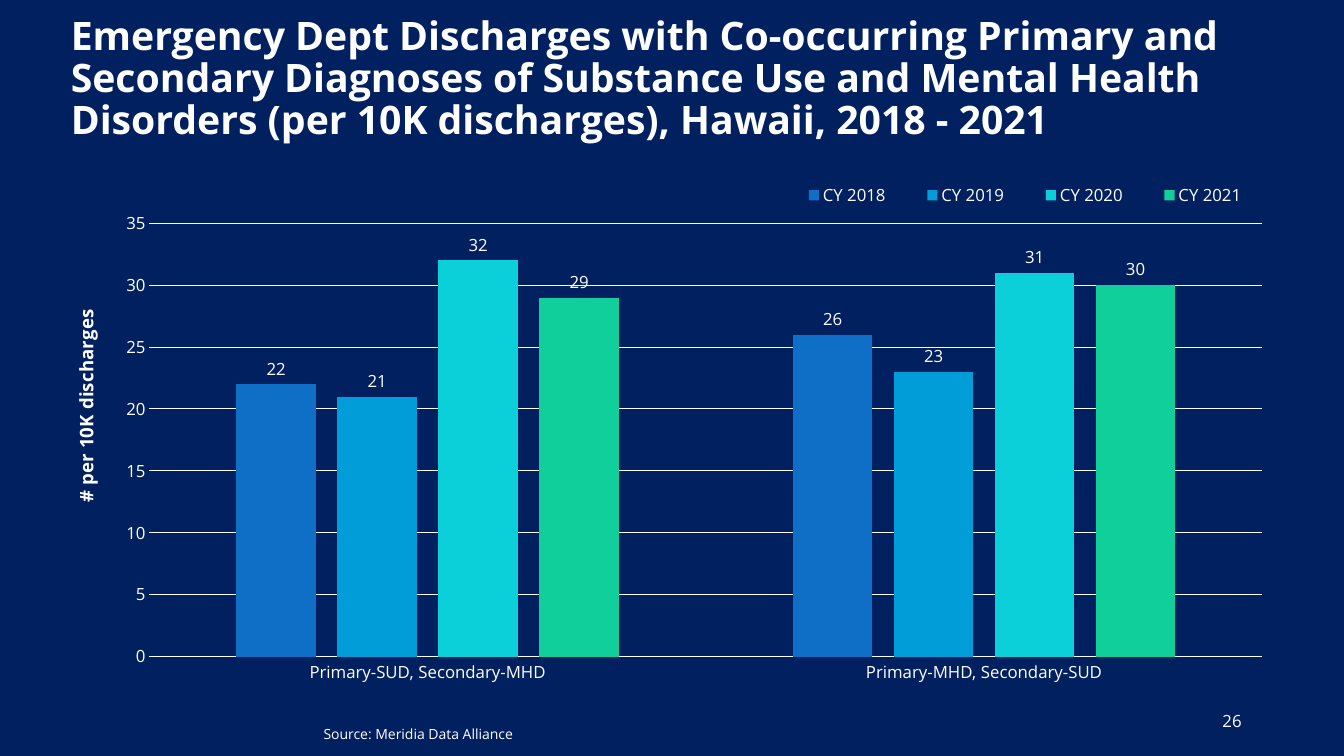
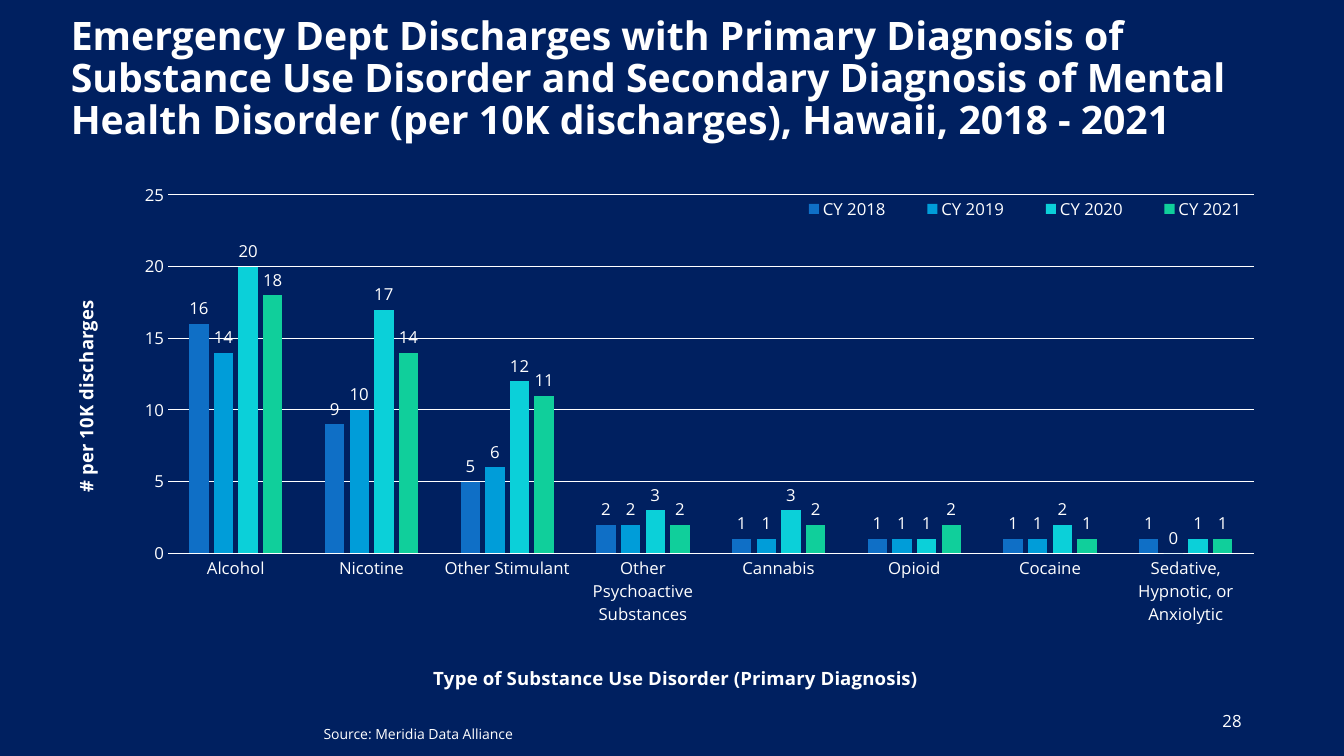
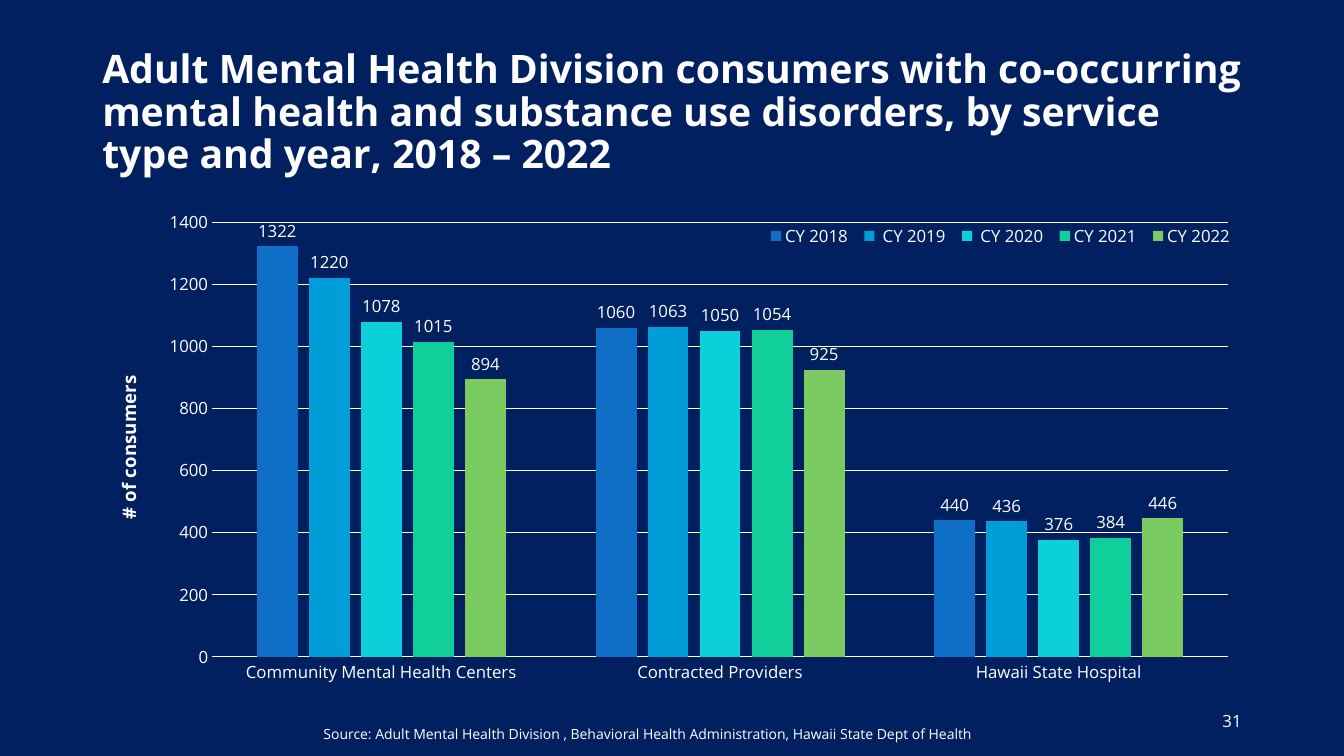
from collections import namedtuple
from dataclasses import dataclass

from lxml import etree
from pptx import Presentation
from pptx.chart.data import CategoryChartData
from pptx.dml.color import RGBColor
from pptx.enum.chart import XL_CHART_TYPE, XL_LABEL_POSITION, XL_LEGEND_POSITION, XL_TICK_MARK
from pptx.enum.text import MSO_ANCHOR, PP_ALIGN
from pptx.oxml.ns import qn
from pptx.util import Pt

COLUMNS = XL_CHART_TYPE.COLUMN_CLUSTERED
OUTSIDE_END = XL_LABEL_POSITION.OUTSIDE_END
LEGEND_TOP = XL_LEGEND_POSITION.TOP
NO_TICK = XL_TICK_MARK.NONE
TOP, MIDDLE = MSO_ANCHOR.TOP, MSO_ANCHOR.MIDDLE
LEFT, RIGHT = PP_ALIGN.LEFT, PP_ALIGN.RIGHT

Box = namedtuple("Box", "left top width height")
Point = namedtuple("Point", "left top")


@dataclass(frozen=True)
class Theme:
    font: str = "Open Sans"
    background: RGBColor = RGBColor(0x00, 0x20, 0x60)
    ink: RGBColor = RGBColor(0xFF, 0xFF, 0xFF)
    years: tuple = ("0F6FC6", "009DD9", "0BD0D9", "10CF9B", "7CCA62")
    title_size: int = 28
    axis_title_size: float = 13.3
    label_size: int = 12
    source_size: int = 10
    line_width: float = 0.75


@dataclass(frozen=True)
class ChartSpec:
    box: Box
    plot: Box
    legend: Box
    value_title: str
    value_title_at: Point
    value_max: int
    value_step: int
    categories: tuple
    series: dict
    category_title: str = ""
    category_title_at: Point = Point(0, 0)


THEME = Theme()
SLIDE_SIZE = (960, 540)
NUMBER_BOX = Box(678, 500.5, 216, 28.75)
WIDE_TITLE = Box(43.5, 5, 873, 104)
INSET_TITLE = Box(66, 28.75, 828, 104.4)
ALLIANCE = "Source: Meridia Data Alliance"

CO_OCCURRING = ChartSpec(
    box=Box(47, 127.5, 865.5, 373),
    plot=Box(106.75, 159.5, 795, 309.5),
    legend=Box(552, 129.5, 361, 20),
    value_title="# per 10K discharges",
    value_title_at=Point(48.5, 218.5),
    value_max=35,
    value_step=5,
    categories=("Primary-SUD, Secondary-MHD", "Primary-MHD, Secondary-SUD"),
    series={
        "CY 2018": (22, 26),
        "CY 2019": (21, 23),
        "CY 2020": (32, 31),
        "CY 2021": (29, 30),
    },
)

BY_SUBSTANCE = ChartSpec(
    box=Box(47, 124, 865.5, 373),
    plot=Box(120, 139.5, 775.5, 259),
    legend=Box(552, 139.5, 361, 20),
    value_title="# per 10K discharges",
    value_title_at=Point(48.5, 214.5),
    value_max=25,
    value_step=5,
    categories=(
        "Alcohol", "Nicotine", "Other Stimulant", "Other Psychoactive Substances",
        "Cannabis", "Opioid", "Cocaine", "Sedative, Hypnotic, or Anxiolytic",
    ),
    series={
        "CY 2018": (16, 9, 5, 2, 1, 1, 1, 1),
        "CY 2019": (14, 10, 6, 2, 1, 1, 1, 0),
        "CY 2020": (20, 17, 12, 3, 3, 1, 2, 1),
        "CY 2021": (18, 14, 11, 2, 2, 2, 1, 1),
    },
    category_title="Type of Substance Use Disorder (Primary Diagnosis)",
    category_title_at=Point(307, 475.5),
)

BY_SERVICE = ChartSpec(
    box=Box(66, 144, 828, 352),
    plot=Box(151.5, 158.75, 725.75, 310.5),
    legend=Box(543, 158.5, 343.5, 20),
    value_title="# of consumers",
    value_title_at=Point(79, 265.5),
    value_max=1400,
    value_step=200,
    categories=("Community Mental Health Centers", "Contracted Providers", "Hawaii State Hospital"),
    series={
        "CY 2018": (1322, 1060, 440),
        " CY 2019": (1220, 1063, 436),
        " CY 2020": (1078, 1050, 376),
        "CY 2021": (1015, 1054, 384),
        "CY 2022": (894, 925, 446),
    },
)


def style_font(font, size, bold=False):
    font.name = THEME.font
    font.size = Pt(size)
    font.bold = bold
    font.color.rgb = THEME.ink


def style_line(line):
    line.color.rgb = THEME.ink
    line.width = Pt(THEME.line_width)


def add_text(slide, box, text, size, bold=False, align=LEFT, anchor=TOP, spacing=1.0):
    frame = slide.shapes.add_textbox(*map(Pt, box)).text_frame
    frame.word_wrap = True
    frame.vertical_anchor = anchor
    paragraph = frame.paragraphs[0]
    paragraph.text = text
    paragraph.alignment = align
    paragraph.line_spacing = spacing
    style_font(paragraph.font, size, bold)


def set_layout(parent, index, chart_box, place, inner=False):
    layout = parent.find(qn("c:layout"))
    if layout is None:
        layout = etree.Element(qn("c:layout"))
        parent.insert(index, layout)
    manual = etree.SubElement(layout, qn("c:manualLayout"))
    settings = [("layoutTarget", "inner")] if inner else []
    settings += [("xMode", "edge"), ("yMode", "edge")]
    settings += [
        ("x", (place.left - chart_box.left) / chart_box.width),
        ("y", (place.top - chart_box.top) / chart_box.height),
    ]
    if isinstance(place, Box):
        settings += [("w", place.width / chart_box.width), ("h", place.height / chart_box.height)]
    for tag, value in settings:
        etree.SubElement(manual, qn("c:" + tag)).set("val", str(value))


def add_axis_title(axis, text, chart_box, place, rotation=0):
    title = axis.axis_title
    title.text_frame.text = text
    style_font(title.text_frame.paragraphs[0].font, THEME.axis_title_size, True)
    body = title.text_frame._txBody.find(qn("a:bodyPr"))
    body.set("rot", str(rotation * 60000))
    body.set("vert", "horz")
    set_layout(title._element, 1, chart_box, place)


def style_axes(chart, spec):
    for axis in (chart.category_axis, chart.value_axis):
        axis.major_tick_mark = axis.minor_tick_mark = NO_TICK
        style_font(axis.tick_labels.font, THEME.label_size)
    style_line(chart.category_axis.format.line)
    values = chart.value_axis
    values.minimum_scale = 0
    values.maximum_scale = spec.value_max
    values.major_unit = spec.value_step
    values.format.line.fill.background()
    style_line(values.major_gridlines.format.line)
    add_axis_title(values, spec.value_title, spec.box, spec.value_title_at, -90)
    if spec.category_title:
        add_axis_title(chart.category_axis, spec.category_title, spec.box, spec.category_title_at)


def style_columns(plot):
    plot.gap_width = 219
    plot.overlap = -27
    plot.vary_by_categories = False
    for year, color in zip(plot.series, THEME.years):
        year.format.fill.solid()
        year.format.fill.fore_color.rgb = RGBColor.from_string(color)
        labels = year.data_labels
        labels.show_value = True
        labels.position = OUTSIDE_END
        labels.number_format = "0"
        labels.number_format_is_linked = False
        style_font(labels.font, THEME.label_size)


def add_column_chart(slide, spec):
    data = CategoryChartData(number_format="0")
    data.categories = spec.categories
    for year, values in spec.series.items():
        data.add_series(year, values)
    chart = slide.shapes.add_chart(COLUMNS, *map(Pt, spec.box), data).chart
    chart.has_title = False
    style_font(chart.font, THEME.source_size)
    style_columns(chart.plots[0])
    style_axes(chart, spec)
    chart.has_legend = True
    chart.legend.position = LEGEND_TOP
    chart.legend.include_in_layout = True
    style_font(chart.legend.font, THEME.label_size)
    set_layout(chart.legend._element, 1, spec.box, spec.legend)
    plot_area = chart._chartSpace.find(".//" + qn("c:plotArea"))
    set_layout(plot_area, 0, spec.box, spec.plot, inner=True)


def add_chart_slide(deck, title, title_box, spec, number, source, source_width):
    slide = deck.slides.add_slide(deck.slide_layouts[6])
    add_text(slide, title_box, title, THEME.title_size, bold=True, anchor=MIDDLE, spacing=0.9)
    add_column_chart(slide, spec)
    add_text(slide, NUMBER_BOX, number, THEME.label_size, align=RIGHT, anchor=MIDDLE)
    add_text(slide, Box(224, 514.75, source_width, 19.5), source, THEME.source_size)


def main():
    deck = Presentation()
    deck.slide_width, deck.slide_height = map(Pt, SLIDE_SIZE)
    backdrop = deck.slide_master.background.fill
    backdrop.solid()
    backdrop.fore_color.rgb = THEME.background

    add_chart_slide(
        deck,
        "Emergency Dept Discharges with Co-occurring Primary and Secondary Diagnoses of "
        "Substance Use and Mental Health Disorders (per 10K discharges), Hawaii, 2018 - 2021",
        WIDE_TITLE, CO_OCCURRING, "26", ALLIANCE, 328.5,
    )
    add_chart_slide(
        deck,
        "Emergency Dept Discharges with Primary Diagnosis of Substance Use Disorder and Secondary "
        "Diagnosis of Mental Health Disorder (per 10K discharges), Hawaii, 2018 - 2021",
        WIDE_TITLE, BY_SUBSTANCE, "28", ALLIANCE, 328.5,
    )
    add_chart_slide(
        deck,
        "Adult Mental Health Division consumers with co-occurring mental health and substance use "
        "disorders, by service type and year, 2018 – 2022",
        INSET_TITLE, BY_SERVICE, "31",
        "Source: Adult Mental Health Division , Behavioral Health Administration, "
        "Hawaii State Dept of Health",
        543,
    )
    deck.save("out.pptx")


if __name__ == "__main__":
    main()
